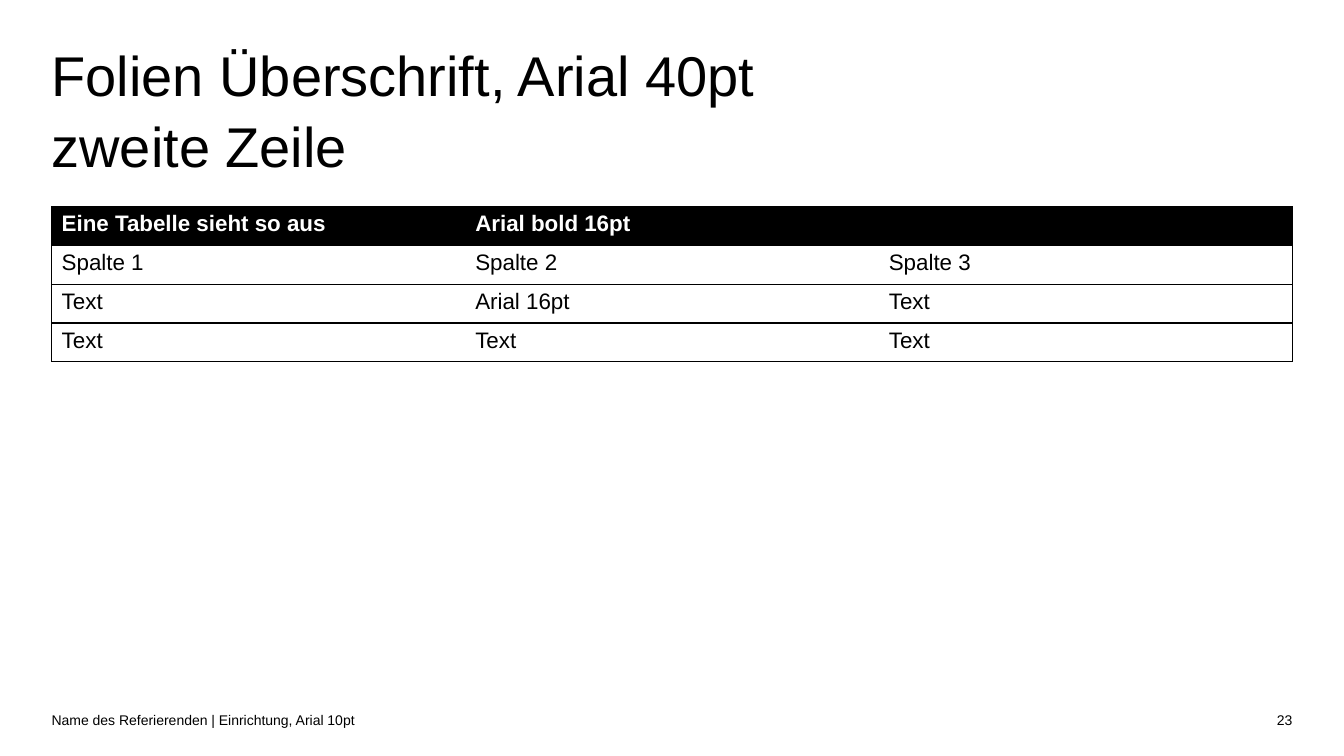
from lxml.etree import SubElement
from pptx import Presentation
from pptx.dml.color import RGBColor
from pptx.enum.text import MSO_ANCHOR, MSO_AUTO_SIZE, PP_ALIGN
from pptx.oxml.ns import qn
from pptx.util import Pt

FONT = "Arial"
BLACK, WHITE = "000000", "FFFFFF"
MARGIN, CONTENT_WIDTH = 36.9, 886.2
ROW_HEIGHT = 27.72
NUMBER_WIDTH = 110.8
ROWS = [
    ["Eine Tabelle sieht so aus", "Arial bold 16pt", ""],
    ["Spalte 1", "Spalte 2", "Spalte 3"],
    ["Text", "Arial 16pt", "Text"],
    ["Text", "Text", "Text"],
]


def color(value):
    return RGBColor.from_string(value)


def format_runs(frame, size, ink=BLACK, bold=False):
    for para in frame.paragraphs:
        for span in para.runs:
            span.font.name = FONT
            span.font.size = Pt(size)
            span.font.bold = bold
            span.font.color.rgb = color(ink)


def place_frame(frame, anchor):
    """Remove the insets, switch on wrapping and anchor the text."""
    frame.margin_left = frame.margin_right = 0
    frame.margin_top = frame.margin_bottom = 0
    frame.word_wrap = True
    frame.auto_size = MSO_AUTO_SIZE.NONE
    frame.vertical_anchor = anchor


def add_title(page, left, top, width, height):
    title = page.shapes.title
    title.left, title.top = Pt(left), Pt(top)
    title.width, title.height = Pt(width), Pt(height)
    frame = title.text_frame
    place_frame(frame, MSO_ANCHOR.TOP)
    frame.text = "Folien Überschrift, Arial 40pt\vzweite Zeile"
    para = frame.paragraphs[0]
    para.alignment = PP_ALIGN.LEFT
    para.line_spacing = 1.05
    format_runs(frame, 40)


def set_borders(cell, visible_sides):
    """Draw the named sides (L, R, T, B) in black and clear the others."""
    properties = cell._tc.get_or_add_tcPr()
    for index, side in enumerate("LRTB"):
        line = properties.makeelement(qn(f"a:ln{side}"), {"w": str(Pt(1))})
        if side in visible_sides:
            fill = SubElement(line, qn("a:solidFill"))
            SubElement(fill, qn("a:srgbClr"), val=BLACK)
        else:
            SubElement(line, qn("a:noFill"))
        properties.insert(index, line)


def add_table(page, left, top, width):
    row_count, column_count = len(ROWS), len(ROWS[0])
    table = page.shapes.add_table(
        row_count, column_count, Pt(left), Pt(top),
        Pt(width), Pt(ROW_HEIGHT * row_count)).table
    for row_index, texts in enumerate(ROWS):
        table.rows[row_index].height = Pt(ROW_HEIGHT)
        header = row_index == 0
        for column_index, text in enumerate(texts):
            cell = table.cell(row_index, column_index)
            cell.fill.solid()
            cell.fill.fore_color.rgb = color(BLACK if header else WHITE)
            cell.text_frame.text = text
            format_runs(cell.text_frame, 16, WHITE if header else BLACK, header)
            if not text:
                para = cell.text_frame.paragraphs[0]
                SubElement(para._p, qn("a:endParaRPr"), sz="1600")
            sides = "TB"
            if column_index == 0:
                sides += "L"
            if column_index == column_count - 1:
                sides += "R"
            set_borders(cell, sides)


def add_footer_text(page, text, alignment, left, top, width, height):
    box = page.shapes.add_textbox(Pt(left), Pt(top), Pt(width), Pt(height))
    frame = box.text_frame
    place_frame(frame, MSO_ANCHOR.MIDDLE)
    frame.text = text
    frame.paragraphs[0].alignment = alignment
    format_runs(frame, 10)


def add_footer(page, left, top, width, height):
    name_width = width - NUMBER_WIDTH
    add_footer_text(page, "Name des Referierenden | Einrichtung, Arial 10pt",
                    PP_ALIGN.LEFT, left, top, name_width, height)
    add_footer_text(page, "23", PP_ALIGN.RIGHT,
                    left + name_width, top, NUMBER_WIDTH, height)


def main():
    deck = Presentation()
    deck.slide_width, deck.slide_height = Pt(960), Pt(540)
    page = deck.slides.add_slide(deck.slide_layouts[5])
    add_title(page, MARGIN, 26.6, CONTENT_WIDTH, 110.8)
    add_table(page, MARGIN, 147.6, CONTENT_WIDTH)
    add_footer(page, MARGIN, 503.3, CONTENT_WIDTH, 22.3)
    deck.save("out.pptx")


if __name__ == "__main__":
    main()
